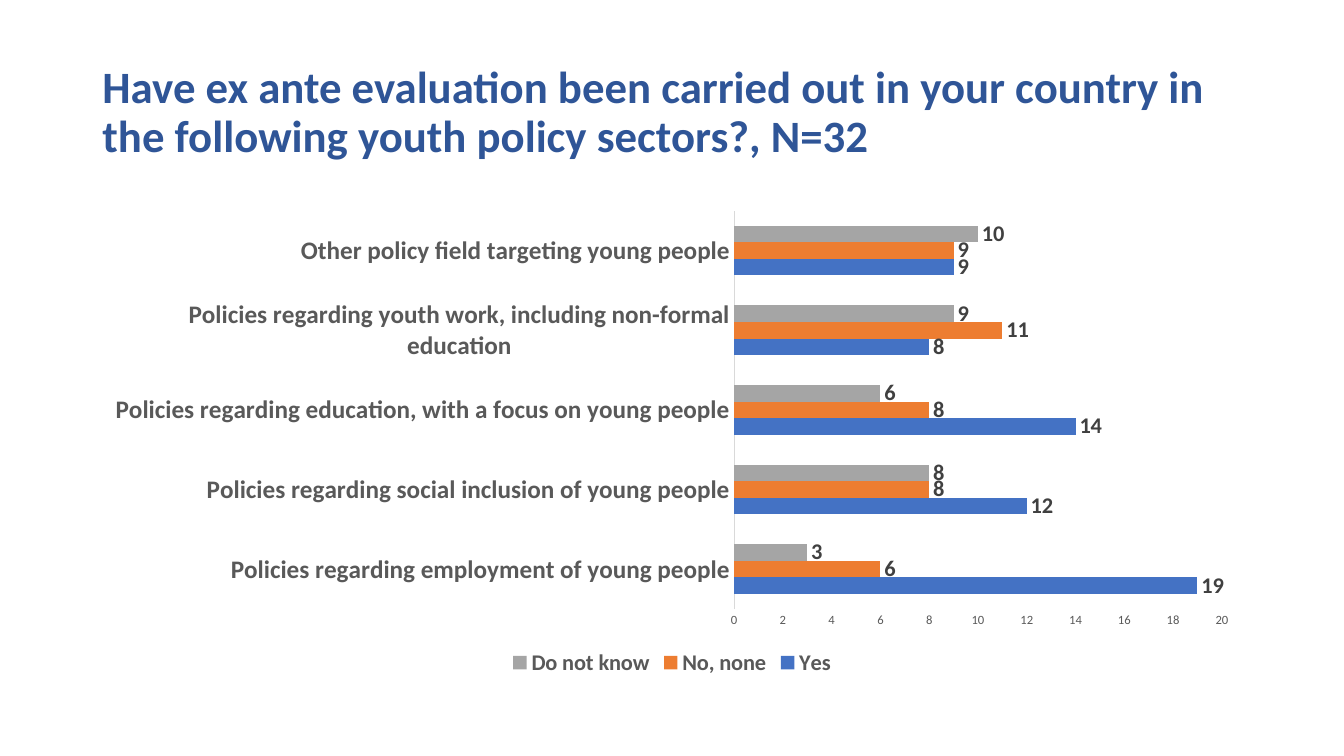
from dataclasses import dataclass

from pptx import Presentation
from pptx.chart.data import CategoryChartData
from pptx.dml.color import RGBColor
from pptx.enum.chart import (
    XL_CHART_TYPE as ChartType,
    XL_LABEL_POSITION as LabelPosition,
    XL_LEGEND_POSITION as LegendPosition,
    XL_TICK_MARK as TickMark,
)
from pptx.enum.text import MSO_ANCHOR, MSO_AUTO_SIZE, PP_ALIGN
from pptx.util import Pt

TITLE = ("Have ex ante evaluation been carried out in your country in "
         "the following youth policy sectors?, N=32")
SECTORS = [
    "Policies regarding employment of young people",
    "Policies regarding social inclusion of young people",
    "Policies regarding education, with a focus on young people",
    "Policies regarding youth work, including non-formal education",
    "Other policy field targeting young people",
]
LEFT, WIDTH = 66, 828


@dataclass(frozen=True)
class Answer:
    name: str
    counts: tuple[int, ...]
    color: str


ANSWERS = [
    Answer("Yes", (19, 12, 14, 8, 9), "4472C4"),
    Answer("No, none", (6, 8, 8, 11, 9), "ED7D31"),
    Answer("Do not know", (3, 8, 6, 9, 10), "A5A5A5"),
]


def rgb(color: str) -> RGBColor:
    return RGBColor.from_string(color)


def set_all(target, values: dict) -> None:
    for attribute, value in values.items():
        setattr(target, attribute, value)


def style_font(font, size: float, color: str, bold: bool = False) -> None:
    set_all(font, {"name": "Calibri", "size": Pt(size), "bold": bold})
    font.color.rgb = rgb(color)


def add_title(slide) -> None:
    title = slide.shapes.title
    set_all(title, {"left": Pt(LEFT), "top": Pt(28.75),
                    "width": Pt(WIDTH), "height": Pt(104.4)})
    frame = title.text_frame
    set_all(frame, {"text": TITLE, "word_wrap": True,
                    "auto_size": MSO_AUTO_SIZE.NONE,
                    "vertical_anchor": MSO_ANCHOR.MIDDLE})
    paragraph = frame.paragraphs[0]
    set_all(paragraph, {"alignment": PP_ALIGN.LEFT, "line_spacing": 0.9})
    style_font(paragraph.runs[0].font, 32, "2F5597", True)


def style_axes(chart) -> None:
    sectors, counts = chart.category_axis, chart.value_axis
    for axis in (sectors, counts):
        set_all(axis, {"major_tick_mark": TickMark.NONE,
                       "minor_tick_mark": TickMark.NONE,
                       "has_major_gridlines": False})
    style_font(sectors.tick_labels.font, 18, "595959", True)
    style_font(counts.tick_labels.font, 9, "595959")
    sectors.format.line.color.rgb = rgb("D9D9D9")
    sectors.format.line.width = Pt(0.75)
    counts.format.line.fill.background()
    set_all(counts, {"minimum_scale": 0, "maximum_scale": 20, "major_unit": 2})


def style_series(series, answer: Answer) -> None:
    series.format.fill.solid()
    series.format.fill.fore_color.rgb = rgb(answer.color)
    series.invert_if_negative = False
    labels = series.data_labels
    set_all(labels, {"show_value": True, "position": LabelPosition.OUTSIDE_END})
    style_font(labels.font, 16, "404040", True)


def add_answers_chart(slide) -> None:
    data = CategoryChartData(number_format="General")
    data.categories = SECTORS
    for answer in ANSWERS:
        data.add_series(answer.name, answer.counts)
    chart = slide.shapes.add_chart(
        ChartType.BAR_CLUSTERED, Pt(LEFT), Pt(143.75), Pt(WIDTH), Pt(342.6), data
    ).chart
    set_all(chart, {"has_title": False, "has_legend": True})
    style_font(chart.font, 10, "000000")
    set_all(chart.legend, {"position": LegendPosition.BOTTOM,
                           "include_in_layout": False})
    style_font(chart.legend.font, 16, "595959", True)
    style_axes(chart)
    plot = chart.plots[0]
    set_all(plot, {"gap_width": 182, "overlap": 0, "vary_by_categories": False})
    for series, answer in zip(plot.series, ANSWERS):
        style_series(series, answer)


def main() -> None:
    deck = Presentation()
    set_all(deck, {"slide_width": Pt(960), "slide_height": Pt(540)})
    slide = deck.slides.add_slide(deck.slide_layouts.get_by_name("Title Only"))
    add_title(slide)
    add_answers_chart(slide)
    deck.save("out.pptx")


if __name__ == "__main__":
    main()
